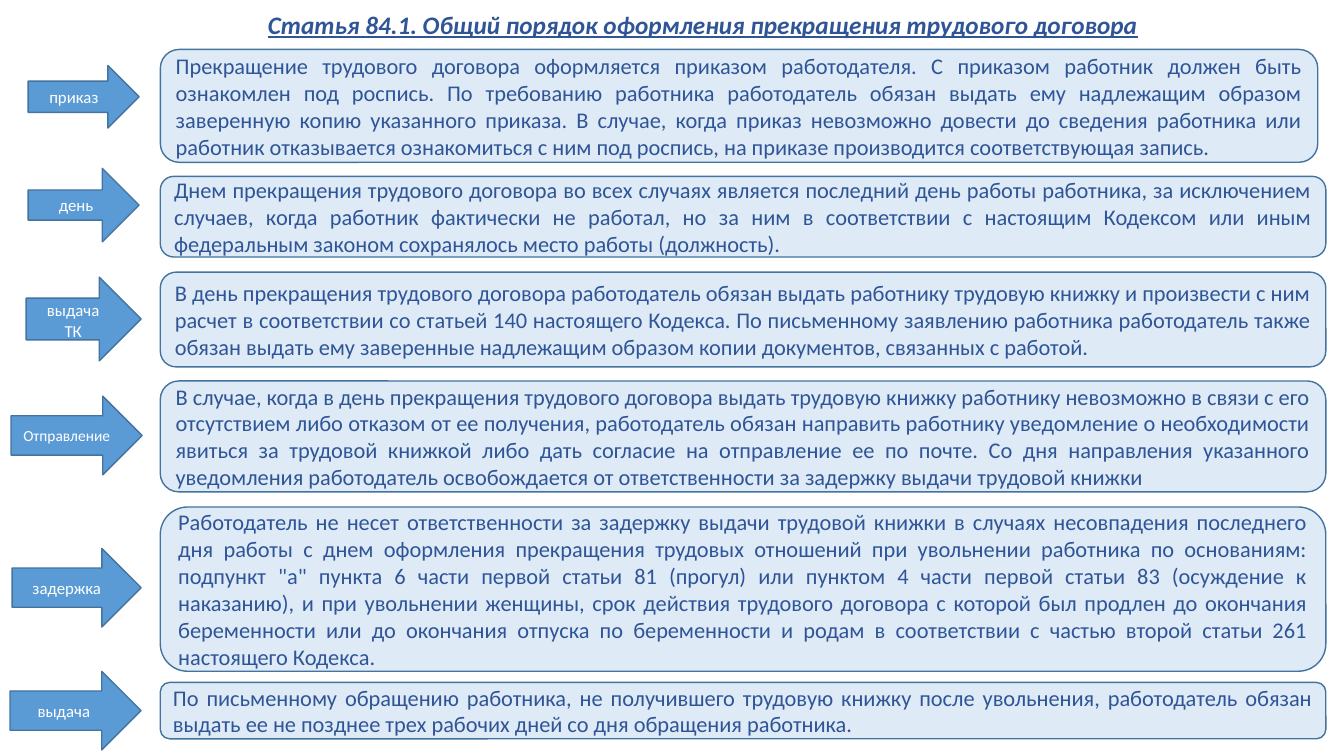
from dataclasses import dataclass

from pptx import Presentation
from pptx.dml.color import RGBColor
from pptx.enum.shapes import MSO_SHAPE
from pptx.enum.text import MSO_ANCHOR, MSO_AUTO_SIZE, PP_ALIGN
from pptx.util import Inches, Pt

ARROW, PANEL = MSO_SHAPE.RIGHT_ARROW, MSO_SHAPE.ROUNDED_RECTANGLE
CENTER, JUSTIFY = PP_ALIGN.CENTER, PP_ALIGN.JUSTIFY
MIDDLE, TOP = MSO_ANCHOR.MIDDLE, MSO_ANCHOR.TOP
NO_AUTOFIT = MSO_AUTO_SIZE.NONE
TITLE_ONLY = 5


@dataclass(frozen=True)
class Theme:
    font: str = "Calibri"
    ink: str = "2F5597"
    panel: str = "DEEBF7"
    arrow: str = "5B9BD5"
    outline: str = "43739E"
    label: str = "FFFFFF"
    title_size: int = 18
    body_size: int = 16
    label_size: int = 12
    small_label_size: int = 11
    wide_space_size: int = 14


THEME = Theme()
TITLE = "Статья 84.1. Общий порядок оформления прекращения трудового договора"
PANEL_LEFT = 1.59
PANEL_WIDTH = 11.56

# Each step: arrow bounds, label spans, panel top, panel height, text
STEPS = [
    ((0.28, 0.65, 1.1, 0.62), [("приказ ", THEME.label_size)], 0.49, 1.12,
     "Прекращение трудового договора оформляется приказом работодателя. "
     "С приказом работник должен быть ознакомлен под роспись. По требованию "
     "работника работодатель обязан выдать ему надлежащим образом заверенную "
     "копию указанного приказа. В случае, когда приказ невозможно довести до "
     "сведения работника или работник отказывается ознакомиться с ним под "
     "роспись, на приказе производится соответствующая запись."),
    ((0.28, 1.67, 1.1, 0.73), [("день", THEME.label_size)], 1.75, 0.8,
     "Днем прекращения трудового договора во всех случаях является последний "
     "день работы работника, за исключением случаев, когда работник фактически "
     "не работал, но за ним в соответствии с настоящим Кодексом или иным "
     "федеральным законом сохранялось место работы (должность)."),
    ((0.26, 2.75, 1.14, 0.83),
     [("выдача", THEME.label_size), (" ", THEME.wide_space_size), ("ТК", THEME.label_size)],
     2.7, 0.94,
     "В день прекращения трудового договора работодатель обязан выдать "
     "работнику трудовую книжку и произвести с ним расчет в соответствии со "
     "статьей 140 настоящего Кодекса. По письменному заявлению работника "
     "работодатель также обязан выдать ему заверенные надлежащим образом копии "
     "документов, связанных с работой."),
    ((0.11, 3.93, 1.3, 0.78), [("Отправление", THEME.small_label_size)], 3.78, 1.1,
     "В случае, когда в день прекращения трудового договора выдать трудовую "
     "книжку работнику невозможно в связи с его отсутствием либо отказом от ее "
     "получения, работодатель обязан направить работнику уведомление о "
     "необходимости явиться за трудовой книжкой либо дать согласие на "
     "отправление ее по почте. Со дня направления указанного уведомления "
     "работодатель освобождается от ответственности за задержку выдачи "
     "трудовой книжки"),
    ((0.12, 5.44, 1.28, 0.78), [("задержка", THEME.label_size)], 5.03, 1.63,
     "Работодатель не несет ответственности за задержку выдачи трудовой книжки "
     "в случаях несовпадения последнего дня работы с днем оформления "
     "прекращения трудовых отношений при увольнении работника по основаниям: "
     "подпункт \"а\" пункта 6 части первой статьи 81 (прогул) или пунктом 4 "
     "части первой статьи 83 (осуждение к наказанию), и при увольнении женщины, "
     "срок действия трудового договора с которой был продлен до окончания "
     "беременности или до окончания отпуска по беременности и родам в "
     "соответствии с частью второй статьи 261 настоящего Кодекса. "),
    ((0.1, 6.66, 1.3, 0.78), [("выдача ", THEME.label_size)], 6.77, 0.56,
     "По письменному обращению работника, не получившего трудовую книжку после "
     "увольнения, работодатель обязан выдать ее не позднее трех рабочих дней "
     "со дня обращения работника."),
]


def write_text(shape, spans, *, color, align, anchor=MIDDLE, emphasis=False):
    """Fill a shape with one paragraph made of (text, size) spans."""
    frame = shape.text_frame
    frame.word_wrap = True
    frame.auto_size = NO_AUTOFIT
    frame.vertical_anchor = anchor
    para = frame.paragraphs[0]
    para.alignment = align
    para.line_spacing = 1.0
    para.space_before = Pt(0)
    for text, size in spans:
        span = para.add_run()
        span.text = text
        font = span.font
        font.name = THEME.font
        font.size = Pt(size)
        font.color.rgb = RGBColor.from_string(color)
        font.bold = font.italic = font.underline = emphasis


def add_title(slide):
    title = slide.shapes.title
    title.left, title.top = Inches(1.75), Inches(0.04)
    title.width, title.height = Inches(10.44), Inches(0.4)
    write_text(title, [(TITLE, THEME.title_size)], color=THEME.ink,
               align=CENTER, anchor=TOP, emphasis=True)


def add_block(slide, kind, bounds, fill):
    block = slide.shapes.add_shape(kind, *(Inches(value) for value in bounds))
    block.shadow.inherit = False
    block.fill.solid()
    block.fill.fore_color.rgb = RGBColor.from_string(fill)
    block.line.color.rgb = RGBColor.from_string(THEME.outline)
    block.line.width = Pt(1)
    return block


def add_panel(slide, top, width, height, text):
    panel = add_block(slide, PANEL, (PANEL_LEFT, top, width, height), THEME.panel)
    write_text(panel, [(text, THEME.body_size)], color=THEME.ink, align=JUSTIFY)


def add_arrow(slide, bounds, spans):
    arrow = add_block(slide, ARROW, bounds, THEME.arrow)
    write_text(arrow, spans, color=THEME.label, align=CENTER)
    return arrow


def main():
    deck = Presentation()
    deck.slide_width, deck.slide_height = Inches(13.33), Inches(7.5)
    slide = deck.slides.add_slide(deck.slide_layouts[TITLE_ONLY])
    add_title(slide)

    # Steps: an arrow pointing at its panel
    for number, (bounds, spans, top, height, text) in enumerate(STEPS):
        width = 11.48 if number == 0 else PANEL_WIDTH
        add_panel(slide, top, width, height, text)
        arrow = add_arrow(slide, bounds, spans)
        if number == 1:  # the second arrow has a slimmer shaft
            arrow.adjustments[0] = 0.41

    deck.save("out.pptx")


if __name__ == "__main__":
    main()
